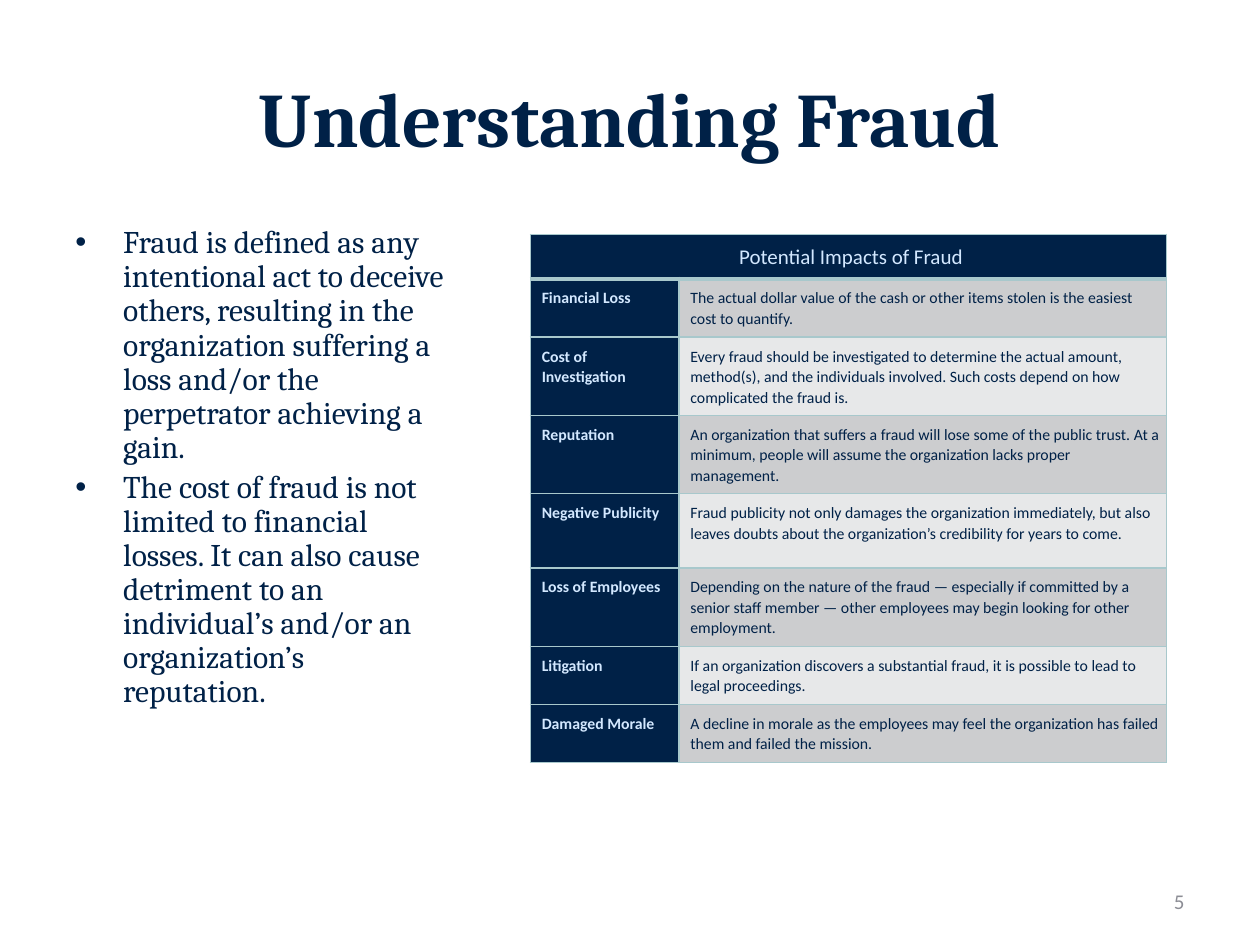
from lxml import etree
from pptx import Presentation, util as u
from pptx.dml.color import RGBColor
from pptx.enum import text as t
from pptx.oxml import ns

HUES = {"navy": "002147", "sky": "D3E8FF", "rule": "A8C8CC",
        "dark": "CCCDCF", "light": "E7E8E9", "grey": "8C8D95"}
POINTS = [
    "Fraud is defined as any intentional act to deceive others, resulting in the "
    "organization suffering a loss and/or the perpetrator achieving a gain.",
    "The cost of fraud is not limited to financial losses. It can also cause "
    "detriment to an individual’s and/or an organization’s reputation.",
]
HEAD = "Potential Impacts of Fraud"
# Name of the impact, what it means, row height in inches
IMPACTS = [
    ("Financial Loss", "The actual dollar value of the cash or other items stolen "
     "is the easiest cost to quantify.", 0.44),
    ("Cost of Investigation", "Every fraud should be investigated to determine the "
     "actual amount, method(s), and the individuals involved. Such costs depend on "
     "how complicated the fraud is.", 0.59),
    ("Reputation", "An organization that suffers a fraud will lose some of the "
     "public trust. At a minimum, people will assume the organization lacks proper "
     "management.", 0.59),
    ("Negative Publicity", "Fraud publicity not only damages the organization "
     "immediately, but also leaves doubts about the organization’s credibility for "
     "years to come.", 0.59),
    ("Loss of Employees", "Depending on the nature of the fraud — especially if "
     "committed by a senior staff member — other employees may begin looking for "
     "other employment.", 0.59),
    ("Litigation", "If an organization discovers a substantial fraud, it is "
     "possible to lead to legal proceedings.", 0.44),
    ("Damaged Morale", "A decline in morale as the employees may feel the "
     "organization has failed them and failed the mission.", 0.44),
]


class Deck:
    serif, sans = "Cambria", "Calibri"

    def __init__(self, slide):
        self.slide = slide

    def run(self, para, words, size, hue, face, bold=False):
        run = para.add_run()
        run.text = words
        font = run.font
        font.size, font.name, font.bold = u.Pt(size), face, bold
        font.color.rgb = RGBColor.from_string(HUES[hue])

    def box(self, left, top, width, height, anchor=t.MSO_ANCHOR.MIDDLE):
        frame = self.slide.shapes.add_textbox(
            *map(u.Inches, (left, top, width, height))).text_frame
        frame.word_wrap = True
        frame.vertical_anchor = anchor
        return frame

    def label(self, place, words, size, hue, face, align, bold=False):
        para = self.box(*place).paragraphs[0]
        para.alignment = align
        self.run(para, words, size, hue, face, bold)

    def bullets(self, place, items):
        frame = self.box(*place, anchor=t.MSO_ANCHOR.TOP)
        for i, words in enumerate(items):
            para = frame.add_paragraph() if i else frame.paragraphs[0]
            props = para._p.get_or_add_pPr()
            props.set("marL", str(u.Inches(0.38)))
            props.set("indent", str(u.Inches(-0.38)))
            etree.SubElement(props, ns.qn("a:buFont"), typeface="Arial")
            etree.SubElement(props, ns.qn("a:buChar"), char="•")
            para.line_spacing = 0.9
            para.space_before = u.Pt(3.6 if i else 0)
            self.run(para, words, 18, "navy", self.serif)

    def edges(self, cell, **wide):
        """Draw all four borders, 1 pt unless a side (L, R, T, B) says otherwise."""
        props = cell._tc.get_or_add_tcPr()
        for i, side in enumerate("LRTB"):
            line = etree.Element(ns.qn("a:ln" + side), w=str(u.Pt(wide.get(side, 1))))
            fill = etree.SubElement(line, ns.qn("a:solidFill"))
            etree.SubElement(fill, ns.qn("a:srgbClr"), val=HUES["rule"])
            props.insert(i, line)

    def cell(self, cell, words, size, hue, fill, bold=False, head=False):
        cell.fill.solid()
        cell.fill.fore_color.rgb = RGBColor.from_string(HUES[fill])
        cell.margin_left, cell.margin_right = u.Inches(0.09), u.Inches(0.05)
        cell.margin_top = cell.margin_bottom = u.Inches(0.07)
        cell.vertical_anchor = t.MSO_ANCHOR.MIDDLE if head else t.MSO_ANCHOR.TOP
        para = cell.text_frame.paragraphs[0]
        para.alignment = t.PP_ALIGN.CENTER if head else t.PP_ALIGN.LEFT
        para.line_spacing, para.space_after = 1.07, u.Pt(8)
        self.run(para, words, size, hue, self.sans, bold)

    def table(self, left, top, cols, head, rows):
        highs = [0.31] + [high for *_, high in rows]
        place = map(u.Inches, (left, top, sum(cols), sum(highs)))
        grid = self.slide.shapes.add_table(len(highs), len(cols), *place).table
        for col, wide in zip(grid.columns, cols):
            col.width = u.Inches(wide)
        for row, high in zip(grid.rows, highs):
            row.height = u.Inches(high)
        grid.cell(0, 0).merge(grid.cell(0, 1))
        self.cell(grid.cell(0, 0), head, 12, "sky", "navy", head=True)
        for i, (name, words, _) in enumerate(rows, 1):
            self.cell(grid.cell(i, 0), name, 9, "sky", "navy", bold=True)
            self.cell(grid.cell(i, 1), words, 9, "navy", "dark" if i % 2 else "light")
        for i, row in enumerate(grid.rows):
            for cell in row.cells:
                self.edges(cell, **{0: {"B": 3}, 1: {"T": 3}}.get(i, {}))


def main():
    show = Presentation()
    show.slide_width, show.slide_height = u.Inches(10), u.Inches(7.5)
    deck = Deck(show.slides.add_slide(show.slide_layouts[6]))
    deck.label((0.5, 0.3, 9, 1.25), "Understanding Fraud", 44, "navy",
               deck.serif, t.PP_ALIGN.CENTER, bold=True)
    deck.bullets((0.5, 1.75, 3.16, 4.95), POINTS)
    deck.table(4.21, 1.86, (1.18, 3.87), HEAD, IMPACTS)
    deck.label((7.17, 6.95, 2.33, 0.4), "5", 12, "grey", deck.sans, t.PP_ALIGN.RIGHT)
    show.save("out.pptx")


if __name__ == "__main__":
    main()
